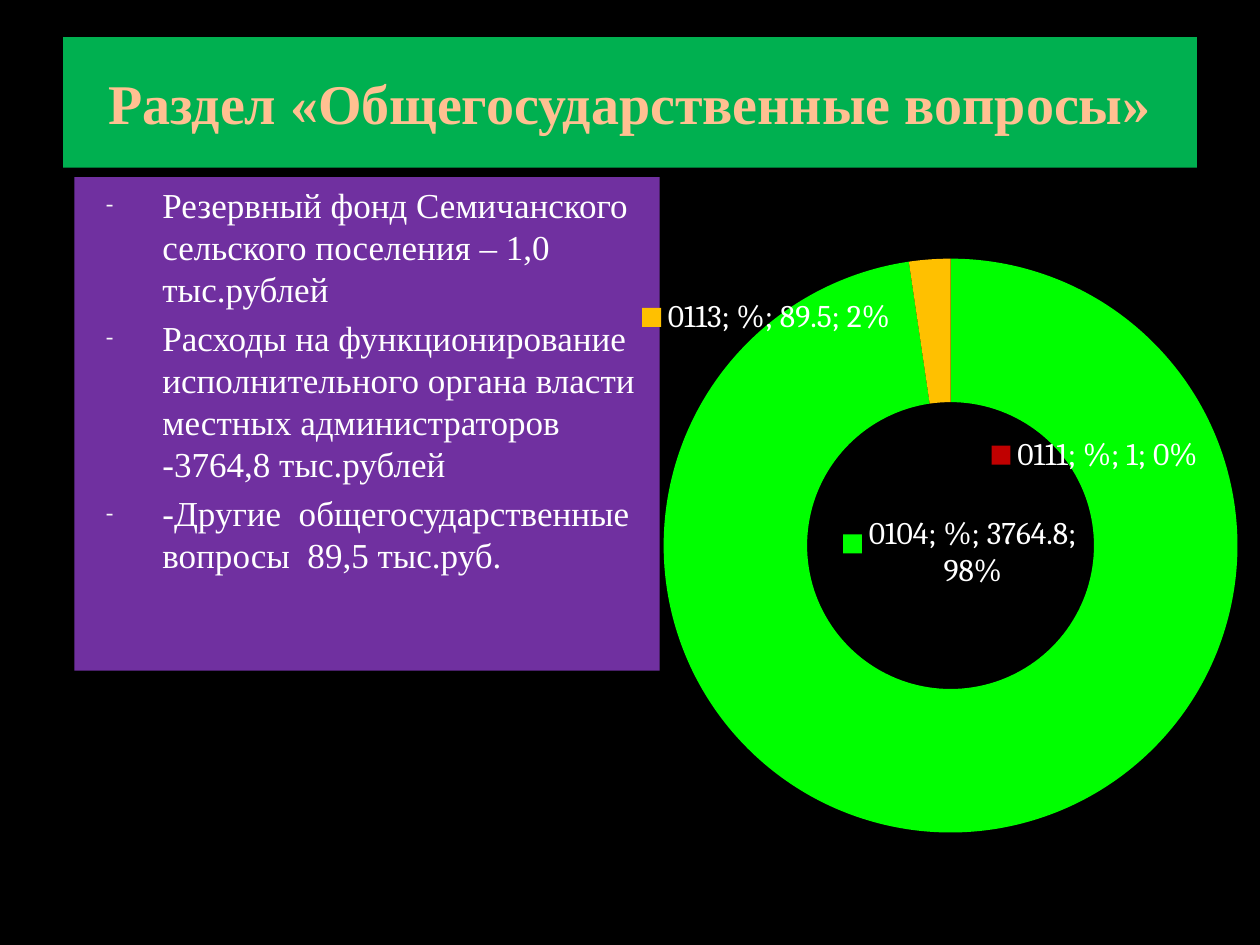
from lxml import etree
from pptx import Presentation
from pptx.chart.data import CategoryChartData
from pptx.dml.color import RGBColor
from pptx.enum.chart import XL_CHART_TYPE
from pptx.enum.text import MSO_ANCHOR, MSO_AUTO_SIZE, PP_ALIGN
from pptx.oxml import parse_xml
from pptx.oxml.ns import nsdecls, qn
from pptx.util import Cm, Pt

DOUGHNUT = XL_CHART_TYPE.DOUGHNUT
TOP, MIDDLE = MSO_ANCHOR.TOP, MSO_ANCHOR.MIDDLE
LEFT, CENTER = PP_ALIGN.LEFT, PP_ALIGN.CENTER
NO_FIT = MSO_AUTO_SIZE.NONE

COLORS = {
    "background": "000000", "title_fill": "00B050", "title_text": "FFC091",
    "body_fill": "7030A0", "text": "FFFFFF", "bullet": "F9F9F9",
}
TITLE = "Раздел «Общегосударственные вопросы»"
EXPENSES = [
    "Резервный фонд Семичанского сельского поселения – 1,0 тыс.рублей",
    "Расходы на функционирование исполнительного органа власти местных "
    "администраторов -3764,8 тыс.рублей",
    "-Другие  общегосударственные вопросы  89,5 тыс.руб.",
]
# Budget code, value, slice colour, label shift as a share of the chart
SLICES = [
    ("0111", 1, "C00000", (0.23, 0.18)),
    ("0104", 3764.8, "00FF00", (-0.01, -0.3)),
    ("0113", 89.5, "FFC000", (-0.27, -0.02)),
]
TITLE_FONT = {"name": "Times New Roman", "size": Pt(32), "bold": True}
BODY_FONT = {"name": "Times New Roman", "size": Pt(20), "bold": False}
CHART_FONT = {"name": "Cambria", "size": Pt(18), "bold": False}


def rgb(name):
    return RGBColor.from_string(COLORS[name])


def set_values(target, values):
    for name, value in values.items():
        setattr(target, name, value)


def style_font(font, values, color):
    set_values(font, values)
    font.color.rgb = rgb(color)


def fill_placeholder(box, place, fill, anchor, paragraphs, font, color, align):
    set_values(box, dict(zip(("left", "top", "width", "height"), place)))
    box.fill.solid()
    box.fill.fore_color.rgb = rgb(fill)
    frame = box.text_frame
    frame.text = "\n".join(paragraphs)
    set_values(frame, {"word_wrap": True, "auto_size": NO_FIT,
                       "vertical_anchor": anchor})
    for para in frame.paragraphs:
        para.alignment = align
        for span in para.runs:
            style_font(span.font, font, color)


def add_dash_bullet(para):
    para.space_before = Pt(4)
    properties = para._p.get_or_add_pPr()
    properties.set("marL", str(Cm(1.52)))
    properties.set("indent", str(Cm(-1.14)))
    color = etree.SubElement(properties, qn("a:buClr"))
    etree.SubElement(color, qn("a:srgbClr"), val=COLORS["bullet"])
    etree.SubElement(properties, qn("a:buSzPct"), val="65000")
    etree.SubElement(properties, qn("a:buFont"), typeface="Times New Roman")
    etree.SubElement(properties, qn("a:buChar"), char="-")


def layout_xml(values):
    items = "".join(f'<c:{tag} val="{value}"/>' for tag, value in values.items())
    return parse_xml(f'<c:layout {nsdecls("c")}><c:manualLayout>{items}'
                     '</c:manualLayout></c:layout>')


def place_label(labels, index, shift):
    """Give one slice a full label, moved from its default place."""
    label = etree.Element(qn("c:dLbl"))
    etree.SubElement(label, qn("c:idx"), val=str(index))
    label.append(layout_xml(dict(zip("xy", shift))))
    for part in ("LegendKey", "Val", "CatName", "SerName", "Percent", "BubbleSize"):
        shown = "0" if part == "BubbleSize" else "1"
        etree.SubElement(label, qn(f"c:show{part}"), val=shown)
    etree.SubElement(label, qn("c:separator")).text = "; "
    labels._element.insert(index, label)


def add_expense_chart(page):
    codes, values, colors, shifts = zip(*SLICES)
    data = CategoryChartData()
    data.categories = codes
    data.add_series("%", values)
    chart = page.shapes.add_chart(
        DOUGHNUT, Cm(12.8), Cm(3.96), Cm(12.6), Cm(13.94), data).chart
    set_values(chart, {"has_legend": False, "has_title": False})
    style_font(chart.font, CHART_FONT, "text")

    plot_area = chart._chartSpace.chart.plotArea
    for old in plot_area.findall(qn("c:layout")):
        plot_area.remove(old)
    plot_area.insert(0, layout_xml({
        "layoutTarget": "inner", "xMode": "edge", "yMode": "edge",
        "x": 0.01, "y": 0.09, "w": 0.99, "h": 0.83}))

    plot = chart.plots[0]
    plot.vary_by_categories = True
    plot._element.find(qn("c:holeSize")).set("val", "50")
    series = plot.series[0]
    labels = series.data_labels
    set_values(labels, {
        "show_legend_key": True, "show_value": True, "show_category_name": True,
        "show_series_name": True, "show_percentage": True})
    style_font(labels.font, CHART_FONT, "text")
    for index, (color, shift) in enumerate(zip(colors, shifts)):
        fill = series.points[index].format.fill
        fill.solid()
        fill.fore_color.rgb = RGBColor.from_string(color)
        place_label(labels, index, shift)


def main():
    deck = Presentation()
    set_values(deck, {"slide_width": Cm(25.4), "slide_height": Cm(19.05)})
    page = deck.slides.add_slide(deck.slide_layouts[1])
    page.background.fill.solid()
    page.background.fill.fore_color.rgb = rgb("background")

    title, body = page.placeholders
    fill_placeholder(title, (Cm(1.27), Cm(0.75), Cm(22.86), Cm(2.63)),
                     "title_fill", MIDDLE, [TITLE], TITLE_FONT, "title_text", CENTER)
    fill_placeholder(body, (Cm(1.5), Cm(3.57), Cm(11.8), Cm(9.95)),
                     "body_fill", TOP, EXPENSES, BODY_FONT, "text", LEFT)
    for para in body.text_frame.paragraphs:
        add_dash_bullet(para)
    add_expense_chart(page)
    deck.save("out.pptx")


if __name__ == "__main__":
    main()
